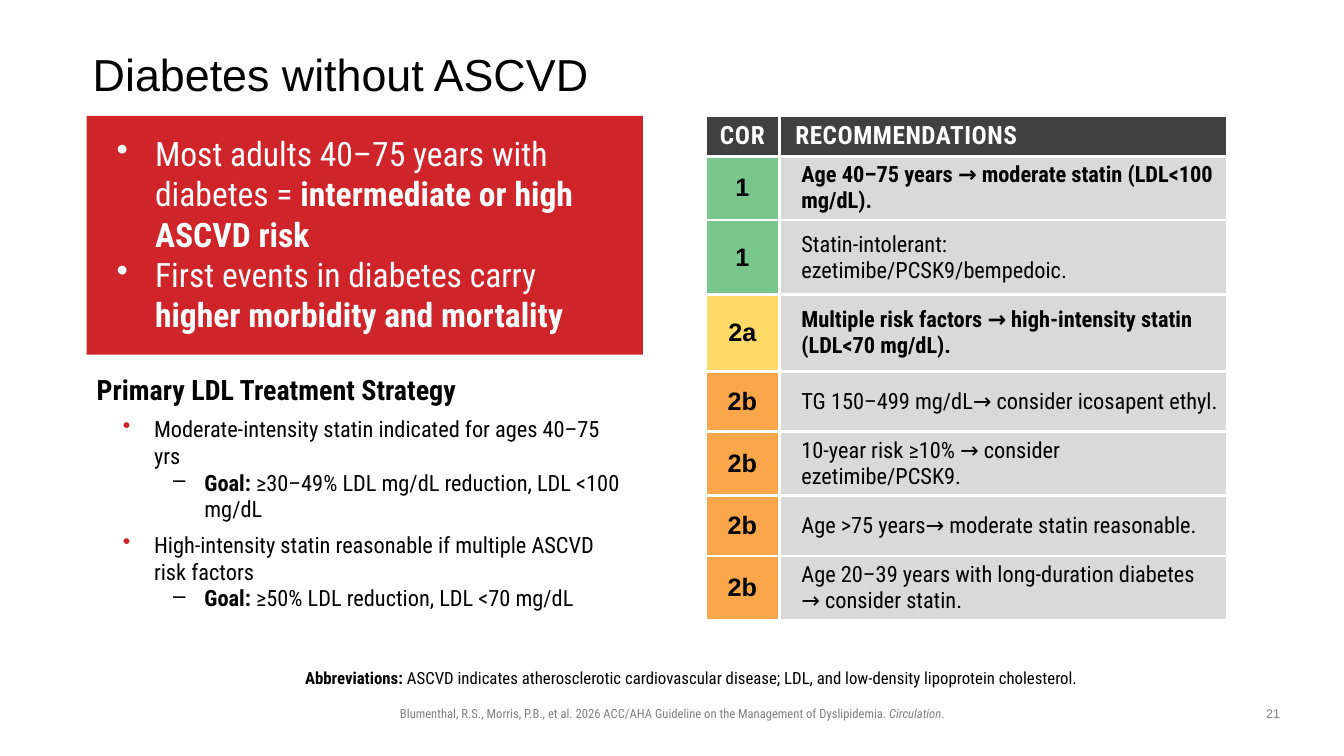
from lxml import etree
from pptx import Presentation, util as u
from pptx.dml.color import RGBColor
from pptx.enum import shapes, text
from pptx.oxml import ns

COLORS = {"black": "000000", "white": "FFFFFF", "red": "CF242A", "gray": "808080",
          "header": "404040", "cell": "D9D9D9",
          "1": "79C78D", "2a": "FFDA68", "2b": "FAA74B"}
ROBOTO, ARIAL = "Roboto Condensed", "Arial"
CENTER, MIDDLE = text.PP_ALIGN.CENTER, text.MSO_ANCHOR.MIDDLE

prs = Presentation()
prs.slide_width, prs.slide_height = u.Inches(13.333), u.Inches(7.5)
W, H = prs.slide_width / 100, prs.slide_height / 100
s = prs.slides.add_slide(prs.slide_layouts[6])


def add_box(x, y, w, h, anchor=text.MSO_ANCHOR.TOP, insets=(0.1, 0.05, 0.1, 0.05)):
    """Add a wrapping text box at percentages of the slide; return its text frame."""
    tf = s.shapes.add_textbox(int(x * W), int(y * H), int(w * W), int(h * H)).text_frame
    tf.word_wrap, tf.vertical_anchor = True, anchor
    tf.margin_left, tf.margin_top, tf.margin_right, tf.margin_bottom = map(u.Inches, insets)
    return tf


def add_text(p, runs, size, font=ROBOTO, color="black", align=None,
             indent=0, hanging=0, bullet=None, bullet_color=None, spacing=0):
    """Fill a paragraph with (text, style) runs; style holds b for bold, i for italic."""
    p.alignment = align
    pPr = p._p.get_or_add_pPr()
    pPr.set("marL", str(u.Inches(indent)))
    pPr.set("indent", str(u.Inches(-hanging)))
    if bullet:
        if bullet_color:
            clr = etree.SubElement(pPr, ns.qn("a:buClr"))
            etree.SubElement(clr, ns.qn("a:srgbClr"), val=COLORS[bullet_color])
        etree.SubElement(pPr, ns.qn("a:buChar"), char=bullet)
    for words, style in runs:
        if words == "\n":
            p.add_line_break()
            continue
        r = p.add_run()
        r.text = words
        r.font.size, r.font.name = u.Pt(size), font
        r.font.bold, r.font.italic = "b" in style, "i" in style
        r.font.color.rgb = RGBColor.from_string(COLORS[color])
        if spacing:
            r.font._element.set("spc", str(spacing))


# Title
tf = add_box(6.9, 5.33, 86.25, 9.6, MIDDLE, (0, 0, 0, 0))
add_text(tf.paragraphs[0], [("Diabetes without ASCVD", "")], 32, ARIAL)
tf.paragraphs[0].line_spacing = 0.9

# Red panel with key facts
sp = s.shapes.add_shape(shapes.MSO_SHAPE.RECTANGLE, int(6.45 * W), int(15.33 * H),
                        int(41.4 * W), int(31.6 * H))
sp.shadow.inherit = False
sp.fill.solid()
sp.fill.fore_color.rgb = RGBColor.from_string(COLORS["red"])
sp.line.fill.background()

facts = [
    [("Most adults 40–75 years with diabetes = ", ""),
     ("intermediate or high ASCVD risk", "b")],
    [("First events in diabetes carry ", ""), ("\n", ""),
     ("higher morbidity and mortality", "b")],
]
tf = add_box(7.95, 16.93, 38.48, 28.27)
for i, runs in enumerate(facts):
    p = tf.add_paragraph() if i else tf.paragraphs[0]
    add_text(p, runs, 24, color="white", indent=0.38, hanging=0.38, bullet="•")

# Treatment strategy
strategy = [
    ("Moderate-intensity statin indicated for ages 40–75 yrs",
     "≥30–49% LDL mg/dL reduction, LDL <100 mg/dL"),
    ("High-intensity statin reasonable if multiple ASCVD risk factors",
     "≥50% LDL reduction, LDL <70 mg/dL"),
]
tf = add_box(6.45, 48.67, 41.03, 33.2)
p = tf.paragraphs[0]
add_text(p, [("Primary LDL Treatment Strategy", "b")], 20)
p.space_after = u.Pt(6)
for advice, goal in strategy:
    add_text(tf.add_paragraph(), [(advice, "")], 16, indent=0.57, hanging=0.31,
             bullet="•", bullet_color="red")
    p = tf.add_paragraph()
    p.level = 1
    add_text(p, [("Goal: ", "b"), (goal, "")], 16, indent=1.07, hanging=0.31,
             bullet="–", bullet_color="black")
    p.space_after = u.Pt(6)

# Recommendations table: class, wording, style, row height in % of the slide
rows = [
    ("COR", "RECOMMENDATIONS", "b", 5.07),
    ("1", "Age 40–75 years → moderate statin (LDL<100 mg/dL).", "b", 8),
    ("1", "Statin-intolerant: ezetimibe/PCSK9/bempedoic.", "", 9.87),
    ("2a", "Multiple risk factors → high-intensity statin (LDL<70 mg/dL).", "b", 10.13),
    ("2b", "TG 150–499 mg/dL→ consider icosapent ethyl.", "", 8),
    ("2b", "10-year risk ≥10% → consider ezetimibe/PCSK9.", "", 8),
    ("2b", "Age >75 years→ moderate statin reasonable.", "", 8),
    ("2b", "Age 20–39 years with long-duration diabetes → consider statin.", "", 8),
]
col_widths = (5.48, 33.38)
table = s.shapes.add_table(len(rows), 2, int(52.5 * W), int(15.33 * H),
                           int(sum(col_widths) * W),
                           int(sum(row[3] for row in rows) * H)).table
table.first_row = table.horz_banding = False
for col, width in zip(table.columns, col_widths):
    col.width = int(width * W)

for i, (cor, advice, style, height) in enumerate(rows):
    table.rows[i].height = int(height * H)
    left, right = table.cell(i, 0), table.cell(i, 1)
    p_left, p_right = left.text_frame.paragraphs[0], right.text_frame.paragraphs[0]
    if i == 0:
        fills = "header", "header"
        add_text(p_left, [(cor, "b")], 18, color="white", align=CENTER, spacing=50)
        add_text(p_right, [(advice, style)], 18, color="white", indent=0.06, spacing=40)
    else:
        fills = cor, "cell"
        left.margin_left = left.margin_right = u.Inches(0.05)
        add_text(p_left, [(cor, "b")], 18, ARIAL, align=CENTER)
        add_text(p_right, [(advice, style)], 16, indent=0.12)
    for cell, fill in zip((left, right), fills):
        cell.vertical_anchor = MIDDLE
        cell.fill.solid()
        cell.fill.fore_color.rgb = RGBColor.from_string(COLORS[fill])
        tcPr = cell._tc.get_or_add_tcPr()
        for n, side in enumerate(("lnL", "lnR", "lnT", "lnB")):
            ln = etree.Element(ns.qn(f"a:{side}"), w=str(u.Pt(2.25)))
            line_fill = etree.SubElement(ln, ns.qn("a:solidFill"))
            etree.SubElement(line_fill, ns.qn("a:srgbClr"), val=COLORS["white"])
            tcPr.insert(n, ln)

# Abbreviations, citation and slide number
tf = add_box(14.1, 85.6, 75.45, 6.13, text.MSO_ANCHOR.BOTTOM, (0, 0.05, 0.1, 0.05))
add_text(tf.paragraphs[0], [
    ("Abbreviations:", "b"),
    (" ASCVD indicates atherosclerotic cardiovascular disease; "
     "LDL, and low-density lipoprotein cholesterol.", "")], 12, align=CENTER)
tf.paragraphs[0].line_spacing = 0.9

tf = add_box(17.7, 92.67, 64.65, 3.33)
add_text(tf.paragraphs[0], [
    ("Blumenthal, R.S., Morris, P.B., et al. 2026 ACC/AHA Guideline on the "
     "Management of Dyslipidemia. ", ""),
    ("Circulation", "i"), (".", "")], 9, color="gray", align=CENTER)

tf = add_box(93.15, 92.67, 3.15, 3.47)
add_text(tf.paragraphs[0], [("21", "")], 9, ARIAL, "gray", CENTER)

prs.save("out.pptx")
